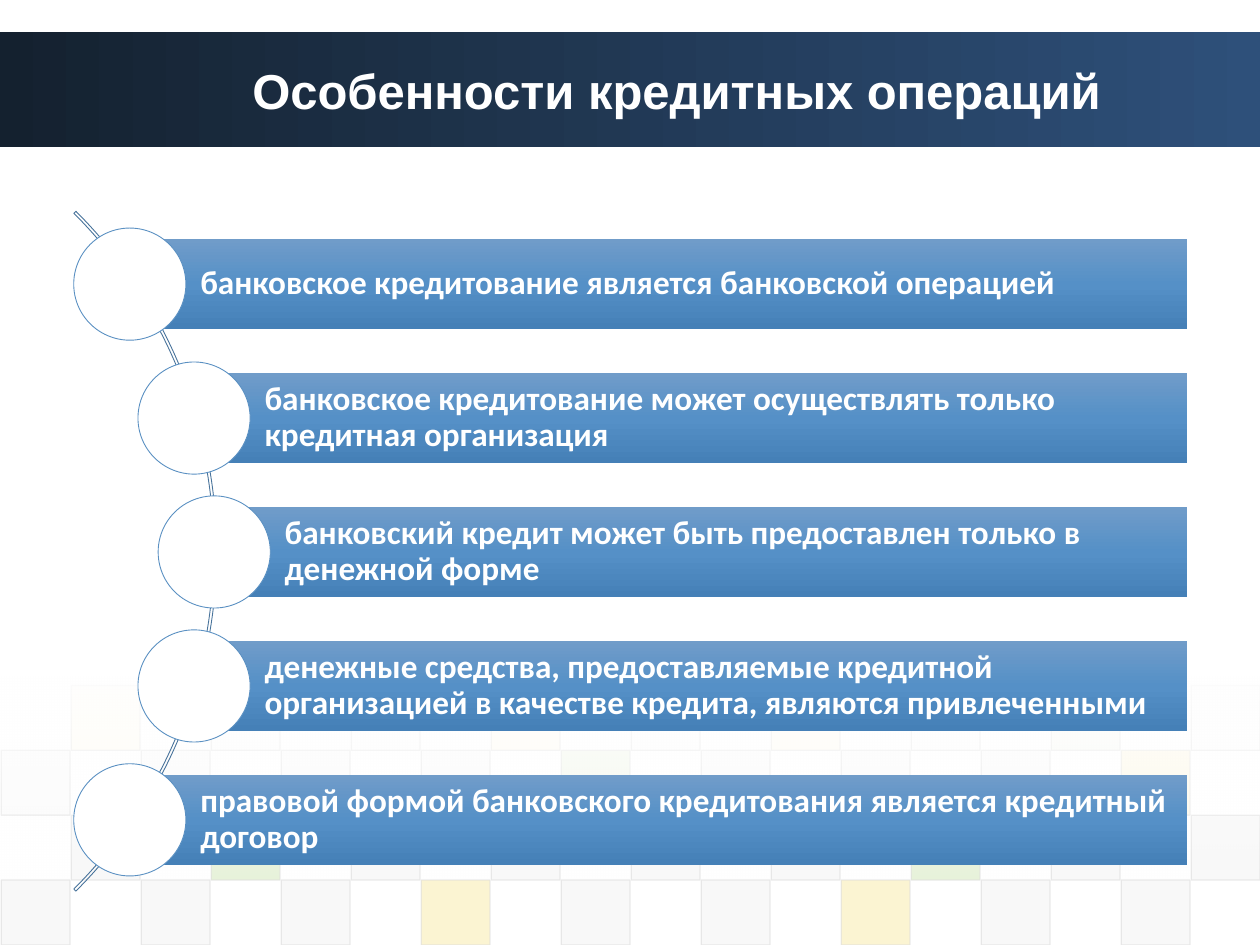
from dataclasses import dataclass
from typing import NamedTuple

from lxml.etree import SubElement
from pptx import Presentation
from pptx.dml.color import RGBColor
from pptx.enum.shapes import MSO_SHAPE as Preset
from pptx.enum.text import MSO_ANCHOR as Anchor, PP_ALIGN as Align
from pptx.oxml.ns import qn
from pptx.util import Inches, Pt

COLUMNS, ROWS = 100, 75
SLIDE_WIDTH, SLIDE_HEIGHT = Inches(10), Inches(7.5)

COLORS = {
    "white": "FFFFFF",
    "header_dark": "14212F",
    "header_light": "2E507A",
    "gray": "DDDDDD",
    "pale": "EAEAEA",
    "green": "8AC246",
    "yellow": "EFC821",
    "arc": "48739B",
    "ring": "5A90C2",
    "bar_top": "709CC9",
    "bar_middle": "5590C7",
    "bar_bottom": "4580B7",
}


class Box(NamedTuple):
    """Place on the slide grid, in columns and rows."""
    left: float
    top: float
    width: float
    height: float

    def lengths(self) -> tuple:
        return (round(self.left * SLIDE_WIDTH / COLUMNS),
                round(self.top * SLIDE_HEIGHT / ROWS),
                round(self.width * SLIDE_WIDTH / COLUMNS),
                round(self.height * SLIDE_HEIGHT / ROWS))


class Stop(NamedTuple):
    position: int
    color: str
    opacity: int = 100


@dataclass
class Feature:
    left: float
    text: str


@dataclass
class TileRow:
    first_column: int
    opacity: int
    colors: str


FEATURES = [
    Feature(10.3, "банковское кредитование является банковской операцией"),
    Feature(15.4, "банковское кредитование может осуществлять только кредитная организация"),
    Feature(17, "банковский кредит может быть предоставлен только в денежной форме"),
    Feature(15.4, "денежные средства, предоставляемые кредитной организацией "
                  "в качестве кредита, являются привлеченными"),
    Feature(10.3, "правовой формой банковского кредитования является кредитный договор"),
]

TILE_COLORS = {"d": "gray", "e": "pale", "g": "green", "y": "yellow"}
TILE_ROWS = [
    TileRow(1, 5, "yeeydyege"),
    TileRow(0, 10, "ddddgdddy"),
    TileRow(1, 20, "dgddddgdd"),
    TileRow(0, 20, "dddyddydd"),
]
TILE_WIDTH, TILE_HEIGHT, TILES_TOP = COLUMNS / 18, 5.15, 54.4

HEADER = Box(0, 2.5, COLUMNS, 9.2)
BAR_TOP, BAR_PITCH, BAR_HEIGHT, BAR_RIGHT = 19, 10.63, 7.1, 94.2
CIRCLE = 8.9


def rgb(name: str) -> RGBColor:
    return RGBColor.from_string(COLORS[name])


def set_opacity(fill_parent, percent: int) -> None:
    for color in fill_parent.iterfind(f"{qn('a:solidFill')}/{qn('a:srgbClr')}"):
        SubElement(color, qn("a:alpha"), val=str(percent * 1000))


def add_plain(shapes, preset, box: Box, fill: str = "", line: str = "", width: float = 0.5):
    shape = shapes.add_shape(preset, *box.lengths())
    shape.shadow.inherit = False
    if fill:
        shape.fill.solid()
        shape.fill.fore_color.rgb = rgb(fill)
    else:
        shape.fill.background()
    if line:
        shape.line.color.rgb = rgb(line)
        shape.line.width = Pt(width)
    else:
        shape.line.fill.background()
    return shape


def add_gradient(shapes, box: Box, stops: list, angle: int):
    """Add a rectangle whose gradient runs clockwise from left to right by angle."""
    shape = add_plain(shapes, Preset.RECTANGLE, box)
    shape.fill.gradient()
    shape.fill.gradient_angle = -angle % 360
    stop_list = shape.element.spPr.find(f"{qn('a:gradFill')}/{qn('a:gsLst')}")
    for old_stop in list(stop_list):
        stop_list.remove(old_stop)
    for stop in stops:
        item = SubElement(stop_list, qn("a:gs"), pos=str(stop.position * 1000))
        color = SubElement(item, qn("a:srgbClr"), val=COLORS[stop.color])
        if stop.opacity < 100:
            SubElement(color, qn("a:alpha"), val=str(stop.opacity * 1000))
    return shape


def format_text(frame, text: str, font_name: str, size: float, align) -> None:
    frame.text = text
    frame.word_wrap = True
    frame.vertical_anchor = Anchor.MIDDLE
    paragraph = frame.paragraphs[0]
    paragraph.alignment = align
    font = paragraph.runs[0].font
    font.name, font.size, font.bold = font_name, Pt(size), True
    font.color.rgb = rgb("white")


def add_tiles(shapes) -> None:
    """Lay a checkerboard that fades out upwards."""
    for row, tiles in enumerate(TILE_ROWS):
        for index, key in enumerate(tiles.colors):
            column = tiles.first_column + 2 * index
            box = Box(column * TILE_WIDTH + 0.1, TILES_TOP + row * TILE_HEIGHT,
                      TILE_WIDTH - 0.1, TILE_HEIGHT)
            tile = add_plain(shapes, Preset.RECTANGLE, box, TILE_COLORS[key], "gray", 0.75)
            properties = tile.element.spPr
            set_opacity(properties, tiles.opacity)
            set_opacity(properties.find(qn("a:ln")), 60)
    add_gradient(shapes, Box(0, 53.7, COLUMNS, 16.2),
                 [Stop(0, "white", 90), Stop(100, "white", 0)], 90)


def add_title(slide) -> None:
    title = slide.shapes.title
    title.left, title.top, title.width, title.height = Box(
        13.3, HEADER.top, 80.8, HEADER.height).lengths()
    format_text(title.text_frame, "Особенности кредитных операций", "Arial", 28, Align.CENTER)
    title.element.getparent().append(title.element)


def add_feature(shapes, feature: Feature, row: int) -> None:
    top = BAR_TOP + row * BAR_PITCH
    bar = add_gradient(
        shapes, Box(feature.left, top, BAR_RIGHT - feature.left, BAR_HEIGHT),
        [Stop(0, "bar_top"), Stop(50, "bar_middle"), Stop(100, "bar_bottom")], 90)
    frame = bar.text_frame
    format_text(frame, feature.text, "Calibri", 19, Align.LEFT)
    frame.paragraphs[0].line_spacing = 0.9
    frame.margin_left = Inches(0.56)
    frame.margin_top = frame.margin_right = frame.margin_bottom = Inches(0.05)
    add_plain(shapes, Preset.OVAL,
              Box(feature.left - CIRCLE / 2, top + (BAR_HEIGHT - CIRCLE) / 2, CIRCLE, CIRCLE),
              "white", "ring")


def main() -> None:
    presentation = Presentation()
    presentation.slide_width, presentation.slide_height = SLIDE_WIDTH, SLIDE_HEIGHT
    slide = presentation.slides.add_slide(presentation.slide_layouts[5])

    add_gradient(slide.shapes, HEADER, [Stop(0, "header_dark"), Stop(100, "header_light")], 0)
    add_tiles(slide.shapes)
    add_title(slide)

    diagram = slide.shapes.add_group_shape().shapes
    arc = add_plain(diagram, Preset.BLOCK_ARC, Box(-59.1, 5.6, 76.3, 76.3), line="arc")
    for index, value in enumerate((189, 27, 0.003)):
        arc.adjustments[index] = value
    for row, feature in enumerate(FEATURES):
        add_feature(diagram, feature, row)

    presentation.save("out.pptx")


if __name__ == "__main__":
    main()
